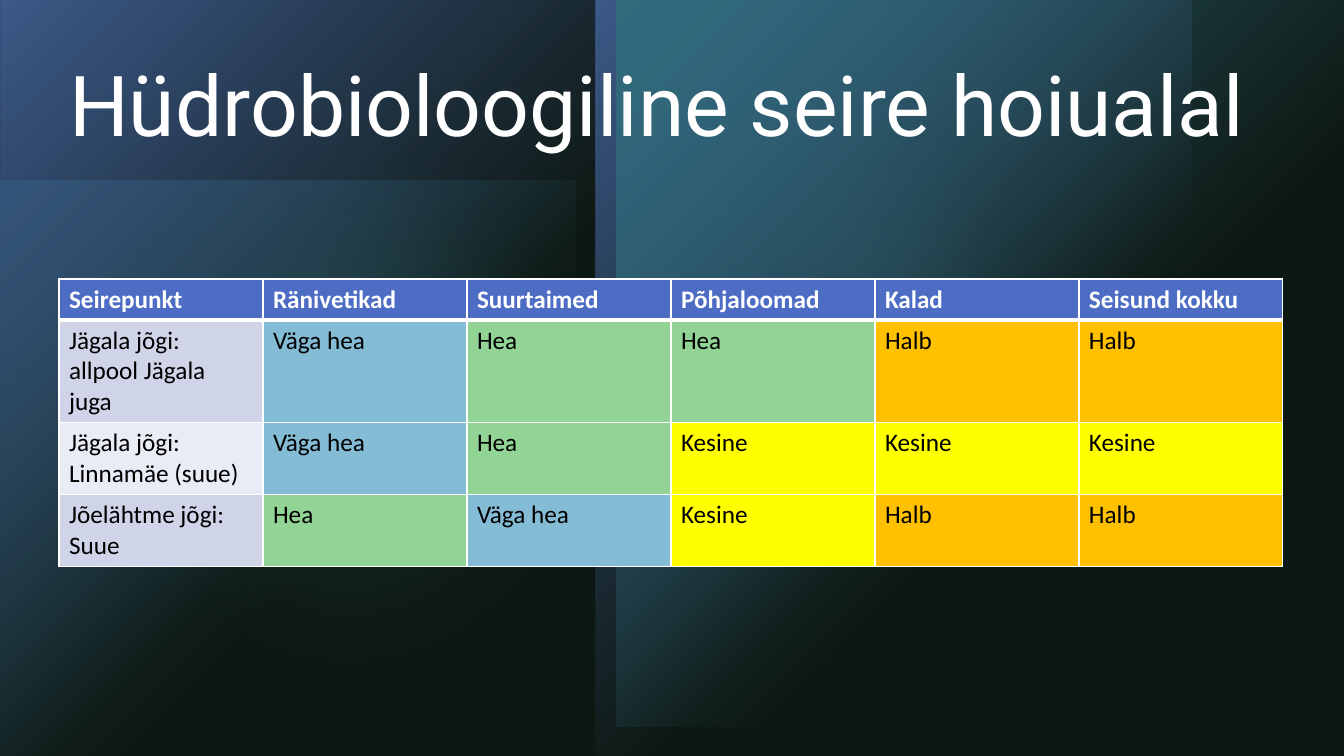
"""Build the slide on hydrobiological monitoring in the protected area."""
from lxml.etree import SubElement
from pptx import Presentation
from pptx.dml.color import RGBColor
from pptx.enum.shapes import MSO_SHAPE
from pptx.enum.text import MSO_ANCHOR, MSO_AUTO_SIZE
from pptx.oxml import parse_xml
from pptx.oxml.ns import nsdecls, qn
from pptx.util import Pt

PX = 914400 * 10 // 1008
THEME = {
    "background": "000000", "veil": "223C2E", "blue": "4D6CC3", "sky": "3B8CB1", "teal": "46B3A8",
    "white": "FFFFFF", "text": "000000", "points": ["D0D4E9", "E9EBF5", "D0D4E9"],
    "status": {"Väga hea": "84BCD6", "Hea": "91D495", "Kesine": "FFFF00", "Halb": "FFC000"},
    "title_font": "Roboto", "title_size": 60, "table_font": "Calibri", "table_size": 18,
}


def format_span(span, font, size, color, bold=False):
    for name, value in {"name": font, "size": Pt(size), "bold": bold}.items():
        setattr(span.font, name, value)
    span.font.color.rgb = RGBColor.from_string(color)


def color_stop(position, color, alpha):
    return (f'<a:gs pos="{position * 1000}"><a:srgbClr val="{color}">'
            f'<a:alpha val="{alpha * 1000}"/></a:srgbClr></a:gs>')


deck = Presentation()
deck.slide_width, deck.slide_height = 12192000, 6858000
page = deck.slides.add_slide(deck.slide_layouts[5])
page.background.fill.solid()
page.background.fill.fore_color.rgb = RGBColor.from_string(THEME["background"])

backdrop = [
    (MSO_SHAPE.RECTANGLE, (0, 181, 576, 576), "sky", 60, {"flipV": "1"}),
    (MSO_SHAPE.OVAL, (634, 43, 476, 476), "teal", 60, {"flipV": "1"}),
    (MSO_SHAPE.OVAL, (0, 56, 700, 700), "teal", 20, {"flipV": "1"}),
    (MSO_SHAPE.RECTANGLE, (0, 0, 596, 756), "blue", 100, {"rot": "10800000", "flipV": "1"}),
    (MSO_SHAPE.RECTANGLE, (596, 0, 596, 756), "blue", 100,
     {"rot": "10800000", "flipH": "1", "flipV": "1"}),
    (MSO_SHAPE.RECTANGLE, (617, 0, 727, 727), "sky", 100, {"rot": "10800000", "flipV": "1"}),
    (MSO_SHAPE.RECTANGLE, (0, 0, 1344, 756), "veil", 40, {}),
]
for preset, bounds, color, alpha, turns in backdrop:
    panel = page.shapes.add_shape(preset, *[length * PX for length in bounds])
    panel.shadow.inherit = False
    panel.line.fill.background()
    panel.fill.solid()
    panel.fill.fore_color.rgb = RGBColor.from_string(THEME[color])
    properties = panel._element.spPr
    for name, value in turns.items():
        properties.find(qn("a:xfrm")).set(name, value)
    solid = properties.find(qn("a:solidFill"))
    if preset == MSO_SHAPE.RECTANGLE and turns:
        properties.replace(solid, parse_xml(
            f'<a:gradFill {nsdecls("a")} rotWithShape="1"><a:gsLst>'
            f'{color_stop(0, THEME[color], alpha)}{color_stop(60, THEME[color], 0)}</a:gsLst>'
            '<a:path path="circle"><a:fillToRect r="100000" b="100000"/></a:path></a:gradFill>'))
    else:
        SubElement(solid[0], qn("a:alpha"), val=str(alpha * 1000))
    if preset == MSO_SHAPE.OVAL:
        SubElement(properties.find(qn("a:effectLst")), qn("a:softEdge"), rad="1270000")

title = page.shapes.title
page.shapes._spTree.append(title._element)
title.left, title.top, title.width, title.height = [length * PX for length in (59, 59, 1224, 200)]
frame = title.text_frame
for name, value in {"text": "Hüdrobioloogiline seire hoiualal", "word_wrap": True,
                    "auto_size": MSO_AUTO_SIZE.NONE, "vertical_anchor": MSO_ANCHOR.TOP}.items():
    setattr(frame, name, value)
para = frame.paragraphs[0]
para.alignment = 1
para.line_spacing = 0.9
format_span(para.runs[0], THEME["title_font"], THEME["title_size"], THEME["white"])

rows = [
    ["Seirepunkt", "Ränivetikad", "Suurtaimed", "Põhjaloomad", "Kalad", "Seisund kokku"],
    ["Jägala jõgi: allpool Jägala juga", "Väga hea", "Hea", "Hea", "Halb", "Halb"],
    ["Jägala jõgi: Linnamäe (suue)", "Väga hea", "Hea", "Kesine", "Kesine", "Kesine"],
    ["Jõelähtme jõgi: Suue", "Hea", "Väga hea", "Kesine", "Halb", "Halb"],
]
heights = [41, 102, 72, 72]
table = page.shapes.add_table(len(rows), len(rows[0]), 59 * PX, 279 * PX,
                              1224 * PX, sum(heights) * PX).table
for row, values in enumerate(rows):
    table.rows[row].height = heights[row] * PX
    for column, value in enumerate(values):
        cell = table.cell(row, column)
        cell.text = value
        header = row == 0
        if header:
            fill = THEME["blue"]
        else:
            fill = THEME["status"][value] if column else THEME["points"][row - 1]
        format_span(cell.text_frame.paragraphs[0].runs[0], THEME["table_font"], THEME["table_size"],
                    THEME["white"] if header else THEME["text"], header)
        borders = cell._tc.get_or_add_tcPr()
        for side in "LRTB":
            thick = (row, side) in [(0, "B"), (1, "T")]
            edge = SubElement(borders, qn(f"a:ln{side}"), w=str(Pt(3 if thick else 1)))
            SubElement(SubElement(edge, qn("a:solidFill")), qn("a:srgbClr"), val=THEME["white"])
        cell.fill.solid()
        cell.fill.fore_color.rgb = RGBColor.from_string(fill)

deck.save("out.pptx")
